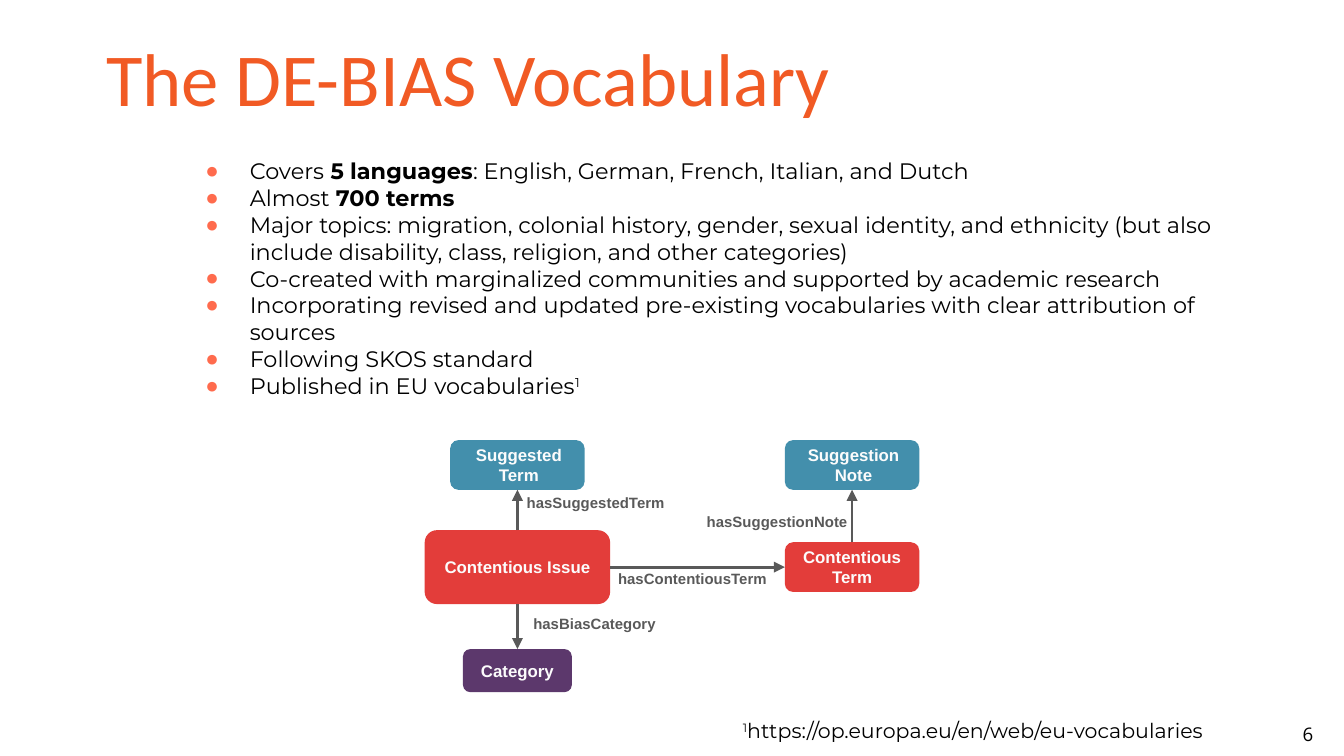
"""Build the DE-BIAS Vocabulary slide with its bullet list and concept diagram."""
import pptx
import pptx.dml.color
import pptx.enum.shapes
import pptx.enum.text
import pptx.oxml
import pptx.oxml.ns
import pptx.util

Inches = pptx.util.Inches
Pt = pptx.util.Pt
RGBColor = pptx.dml.color.RGBColor
PP_ALIGN = pptx.enum.text.PP_ALIGN
MSO_ANCHOR = pptx.enum.text.MSO_ANCHOR

ORANGE = RGBColor(0xF1, 0x5A, 0x24)
RED = RGBColor(0xE3, 0x3D, 0x3A)
PURPLE = RGBColor(0x5C, 0x38, 0x6C)
BLUE = RGBColor(0x43, 0x8F, 0xAC)
GRAY = RGBColor(0x59, 0x59, 0x59)
NEAR_WHITE = RGBColor(0xFC, 0xFC, 0xFC)
BLACK = RGBColor(0, 0, 0)
CORAL = RGBColor(0xFF, 0x6B, 0x4D)

SLIDE_WIDTH = 10
SLIDE_HEIGHT = SLIDE_WIDTH * 9 / 16

TITLE = "The DE-BIAS Vocabulary"
POINTS = [
    [("Covers", ""), (" 5 languages", "bold"),
     (": English, German, French, Italian, and Dutch", "")],
    [("Almost", ""), (" 700 terms", "bold")],
    [("Major topics: migration, colonial history, gender, sexual identity, and ethnicity "
      "(but also include disability, class, religion, and other categories)", "")],
    [("Co-created with marginalized communities and supported by academic research", "")],
    [("Incorporating revised and updated pre-existing vocabularies with clear "
      "attribution of sources", "")],
    [("Following SKOS standard", "")],
    [("Published in EU vocabularies", ""), ("1", "super")],
]
FOOTNOTE = [("1", "super"), ("https://op.europa.eu/en/web/eu-vocabularies", "")]
PAGE_NUMBER = "6"

ISSUE_X, TERM_X = 3.85, 6.34
TOP_Y, MIDDLE_Y, BOTTOM_Y = 3.46, 4.22, 4.99
CONCEPTS = {
    "Contentious Issue": (ISSUE_X, MIDDLE_Y, 1.38, 0.55, RED, 0.1),
    "Category": (ISSUE_X, BOTTOM_Y, 0.81, 0.32, PURPLE, 0.1),
    "Suggested Term": (ISSUE_X, TOP_Y, 1, 0.37, BLUE, 0.12),
    "Suggestion Note": (TERM_X, TOP_Y, 1, 0.37, BLUE, 0.12),
    "Contentious Term": (TERM_X, MIDDLE_Y, 1, 0.37, RED, 0.1),
}
TOP, LEFT, BOTTOM, RIGHT = range(4)
RELATIONS = [
    ("hasBiasCategory", "Contentious Issue", BOTTOM, "Category", TOP, (3.87, 4.49, 1.26)),
    ("hasContentiousTerm", "Contentious Issue", RIGHT, "Contentious Term", LEFT, (4.5, 4.15, 1.38)),
    ("hasSuggestedTerm", "Contentious Issue", TOP, "Suggested Term", BOTTOM, (3.82, 3.59, 1.38)),
    ("hasSuggestionNote", "Contentious Term", TOP, "Suggestion Note", BOTTOM, (5.16, 3.73, 1.31)),
]


def set_frame(frame, anchor=MSO_ANCHOR.TOP, left=0.1, vertical=0.1):
    frame.word_wrap = True
    frame.auto_size = pptx.enum.text.MSO_AUTO_SIZE.NONE
    frame.vertical_anchor = anchor
    frame.margin_left, frame.margin_right = Inches(left), Inches(0.1)
    frame.margin_top = frame.margin_bottom = Inches(vertical)


def add_run(paragraph, text, font, size, color, style=""):
    run = paragraph.add_run()
    run.text = text
    run.font.name, run.font.size, run.font.bold = font, Pt(size), style == "bold"
    run.font.color.rgb = color
    if style == "super":
        run._r.get_or_add_rPr().set("baseline", "30000")


def add_text_box(slide, box, anchor=MSO_ANCHOR.TOP):
    frame = slide.shapes.add_textbox(*map(Inches, box)).text_frame
    set_frame(frame, anchor)
    return frame


def add_child(parent, tag, **attributes):
    element = parent.makeelement(pptx.oxml.ns.qn(tag), attributes)
    parent.append(element)
    return element


def add_bullet(paragraph):
    properties = paragraph._p.get_or_add_pPr()
    properties.set("marL", str(Inches(0.5)))
    properties.set("indent", str(Inches(-0.33)))
    add_child(add_child(properties, "a:buClr"), "a:srgbClr", val=str(CORAL))
    add_child(properties, "a:buFont", typeface="Arial")
    add_child(properties, "a:buChar", char="●")


def add_concept(slide, name, center_x, center_y, width, height, color, left_margin):
    concept = slide.shapes.add_shape(
        pptx.enum.shapes.MSO_SHAPE.ROUNDED_RECTANGLE,
        Inches(center_x - width / 2), Inches(center_y - height / 2),
        Inches(width), Inches(height))
    concept.shadow.inherit = False
    concept.fill.solid()
    concept.fill.fore_color.rgb = color
    concept.line.fill.background()
    set_frame(concept.text_frame, MSO_ANCHOR.MIDDLE, left_margin)
    paragraph = concept.text_frame.paragraphs[0]
    paragraph.alignment = PP_ALIGN.CENTER
    add_run(paragraph, name, "Arial", 9, NEAR_WHITE, "bold")
    return concept


def add_arrow(slide, source, source_side, target, target_side):
    arrow = slide.shapes.add_connector(
        pptx.enum.shapes.MSO_CONNECTOR.STRAIGHT, 0, 0, 0, 0)
    arrow.begin_connect(source, source_side)
    arrow.end_connect(target, target_side)
    arrow.line.color.rgb = GRAY
    arrow.line.width = Pt(1.5)
    add_child(arrow.line._get_or_add_ln(), "a:tailEnd", type="triangle")
    add_child(arrow._element.spPr, "a:effectLst")


def main():
    deck = pptx.Presentation()
    deck.slide_width, deck.slide_height = Inches(SLIDE_WIDTH), Inches(SLIDE_HEIGHT)
    slide = deck.slides.add_slide(deck.slide_layouts.get_by_name("Title Only"))

    title = slide.shapes.title
    title.left, title.top, title.width, title.height = map(Inches, (0.69, 0.3, 8.62, 0.63))
    set_frame(title.text_frame, MSO_ANCHOR.MIDDLE, vertical=0.05)
    heading = title.text_frame.paragraphs[0]
    heading.alignment = PP_ALIGN.LEFT
    heading.line_spacing = 0.9
    add_run(heading, TITLE, "Calibri", 40, ORANGE)

    points = add_text_box(slide, (1.26, 1.07, 7.95, 2.14))
    for index, runs in enumerate(POINTS):
        point = points.add_paragraph() if index else points.paragraphs[0]
        add_bullet(point)
        for text, style in runs:
            add_run(point, text, "Montserrat", 12, BLACK, style)

    footnote = add_text_box(slide, (5.43, 5.24, 4.64, 0.39)).paragraphs[0]
    for text, style in FOOTNOTE:
        add_run(footnote, text, "Montserrat", 11, BLACK, style)

    concepts = {name: add_concept(slide, name, *place) for name, place in CONCEPTS.items()}
    for label, source, source_side, target, target_side, place in RELATIONS:
        add_arrow(slide, concepts[source], source_side, concepts[target], target_side)
        relation = add_text_box(slide, (*place, 0.17)).paragraphs[0]
        add_run(relation, label, "Arial", 8, GRAY, "bold")

    page_number = add_text_box(slide, (9.27, 5.25, 0.6, 0.43), MSO_ANCHOR.MIDDLE).paragraphs[0]
    page_number.alignment = PP_ALIGN.RIGHT
    add_run(page_number, PAGE_NUMBER, "Open Sans", 10, BLACK)

    deck.save("out.pptx")


if __name__ == "__main__":
    main()
